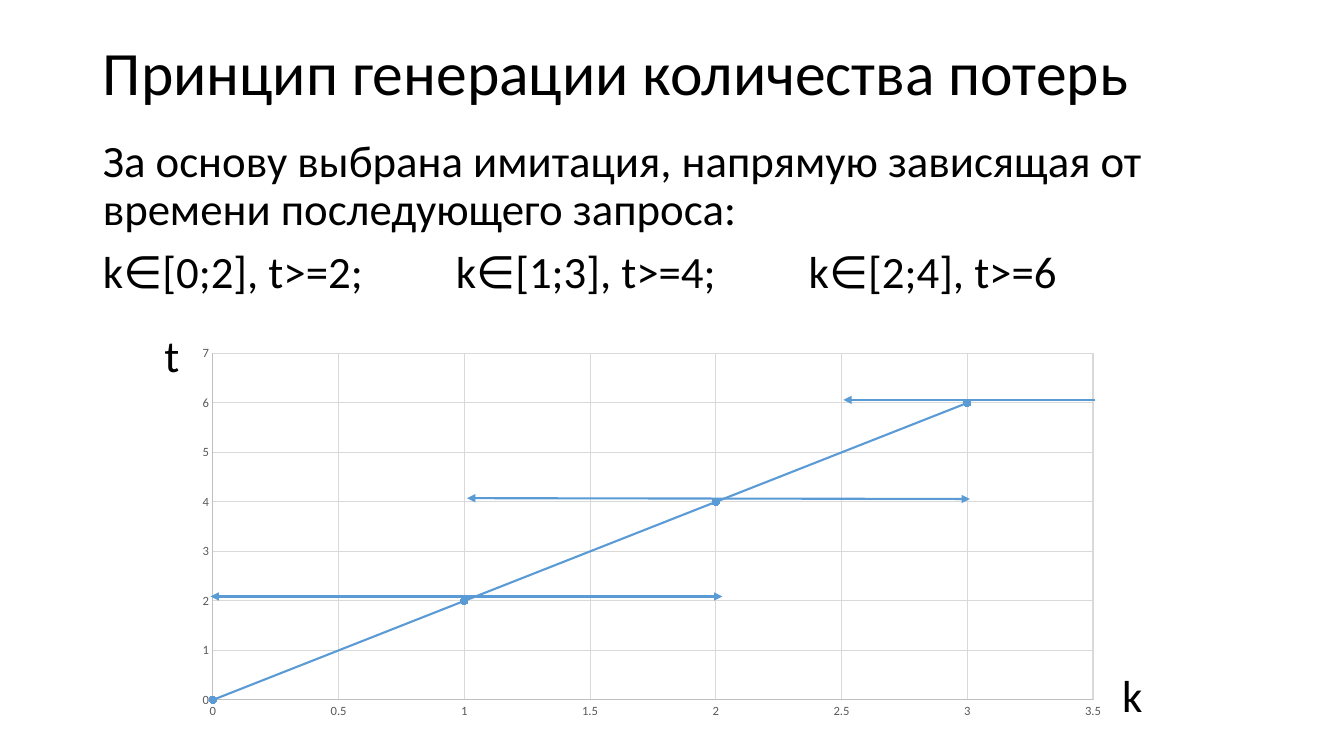
from dataclasses import dataclass

from lxml.etree import SubElement
from pptx import Presentation
from pptx.chart.data import XyChartData
from pptx.dml.color import RGBColor
from pptx.enum.chart import XL_CHART_TYPE as ChartType
from pptx.enum.chart import XL_MARKER_STYLE as MarkerStyle
from pptx.enum.chart import XL_TICK_MARK as TickMark
from pptx.enum.shapes import MSO_CONNECTOR as Connector
from pptx.enum.text import MSO_ANCHOR as Anchor
from pptx.enum.text import MSO_AUTO_SIZE as AutoSize
from pptx.oxml.ns import qn
from pptx.util import Inches, Pt


@dataclass(frozen=True)
class Theme:
    font: str = "Calibri"
    ink: RGBColor = RGBColor(0x00, 0x00, 0x00)
    label: RGBColor = RGBColor(0x59, 0x59, 0x59)
    axis: RGBColor = RGBColor(0xBF, 0xBF, 0xBF)
    grid: RGBColor = RGBColor(0xD9, 0xD9, 0xD9)
    accent: RGBColor = RGBColor(0x5B, 0x9B, 0xD5)
    title_size: int = 44
    body_size: int = 32
    chart_size: int = 10
    tick_size: int = 9
    marker_size: int = 5
    paragraph_gap: int = 10
    leading: float = 0.9
    thin: float = 0.75
    stroke: float = 1.5


class SlideBuilder:
    """Draws styled elements on a page divided into 12 columns and 10 rows."""

    columns, rows = 12, 10

    def __init__(self, deck, theme):
        self.theme = theme
        self.column = deck.slide_width / self.columns
        self.row = deck.slide_height / self.rows
        self.page = deck.slides.add_slide(deck.slide_layouts[6])

    def place(self, *lengths):
        units = (self.column, self.row) * 2
        return [round(length * unit) for length, unit in zip(lengths, units)]

    def style_font(self, font, size, color):
        font.name = self.theme.font
        font.size = Pt(size)
        font.color.rgb = color

    def style_line(self, line, color, width):
        line.color.rgb = color
        line.width = Pt(width)

    def text(self, area, lines, size, leading=None, gap=None,
             anchor=Anchor.TOP, wrap=True, fit=AutoSize.NONE):
        box = self.page.shapes.add_textbox(*self.place(*area))
        frame = box.text_frame
        frame.text = "\n".join(lines)
        frame.word_wrap = wrap
        frame.auto_size = fit
        frame.vertical_anchor = anchor
        for para in frame.paragraphs:
            para.line_spacing = leading
            para.space_before = gap and Pt(gap)
            for span in para.runs:
                self.style_font(span.font, size, self.theme.ink)

    def scatter(self, area, plot, name, points, x_scale, y_scale):
        theme = self.theme
        data = XyChartData()
        series_data = data.add_series(name)
        for x, y in points:
            series_data.add_data_point(x, y)
        chart = self.page.shapes.add_chart(
            ChartType.XY_SCATTER_LINES, *self.place(*area), data).chart
        chart.has_legend = chart.has_title = False
        self.style_font(chart.font, theme.chart_size, theme.ink)
        chart.plots[0].vary_by_categories = False

        for axis, (limit, step) in ((chart.category_axis, x_scale),
                                    (chart.value_axis, y_scale)):
            axis.minimum_scale, axis.maximum_scale = 0, limit
            axis.major_unit = step
            axis.major_tick_mark = axis.minor_tick_mark = TickMark.NONE
            axis.has_major_gridlines = True
            self.style_line(axis.major_gridlines.format.line, theme.grid, theme.thin)
            self.style_line(axis.format.line, theme.axis, theme.thin)
            self.style_font(axis.tick_labels.font, theme.tick_size, theme.label)

        series = chart.plots[0].series[0]
        series.smooth = False
        self.style_line(series.format.line, theme.accent, theme.stroke)
        marker = series.marker
        marker.style = MarkerStyle.CIRCLE
        marker.size = theme.marker_size
        marker.format.fill.solid()
        marker.format.fill.fore_color.rgb = theme.accent
        marker.format.line.color.rgb = theme.accent
        self.fix_plot(chart, plot)

    def fix_plot(self, chart, shares):
        plot_area = chart.element.find(".//" + qn("c:plotArea"))
        layout = plot_area.find(qn("c:layout"))
        if layout is None:
            layout = SubElement(plot_area, qn("c:layout"))
            plot_area.insert(0, layout)
        manual = SubElement(layout, qn("c:manualLayout"))
        settings = [("layoutTarget", "inner"), ("xMode", "edge"), ("yMode", "edge")]
        for tag, value in settings + list(zip("xywh", shares)):
            SubElement(manual, qn(f"c:{tag}")).set("val", str(value))

    def arrow(self, start, end, both_ends=True):
        line = self.page.shapes.add_connector(
            Connector.STRAIGHT, *self.place(*start, *end))
        self.style_line(line.line, self.theme.accent, self.theme.stroke)
        properties = line.element.spPr
        outline = properties.find(qn("a:ln"))
        for tag in ("headEnd", "tailEnd") if both_ends else ("tailEnd",):
            SubElement(outline, qn(f"a:{tag}")).set("type", "triangle")
        SubElement(properties, qn("a:effectLst"))


def main():
    deck = Presentation()
    deck.slide_width, deck.slide_height = Inches(13.33), Inches(7.5)
    theme = Theme()
    slide = SlideBuilder(deck, theme)

    slide.text((0.83, 0.23, 10.35, 1.53), ["Принцип генерации количества потерь"],
               theme.title_size, theme.leading, anchor=Anchor.MIDDLE)
    conditions = ["k∈[0;2], t>=2;", "k∈[1;3], t>=4;", "k∈[2;4], t>=6"]
    slide.text((0.83, 1.77, 10.35, 7.65), [
        "За основу выбрана имитация, напрямую зависящая от времени последующего запроса:",
        "\t\t".join(conditions),
    ], theme.body_size, theme.leading, theme.paragraph_gap)

    slide.scatter((1.65, 4.47, 8.36, 5.15), (0.03, 0.04, 0.94, 0.89), "Series 1",
                  [(k, 2 * k) for k in range(4)], (3.5, 0.5), (7, 1))
    slide.text((1.38, 4.27, 0.35, 0.85), ["t"], theme.body_size,
               fit=AutoSize.SHAPE_TO_FIT_TEXT)
    slide.text((9.93, 8.76, 0.37, 0.85), ["k"], theme.body_size,
               wrap=False, fit=AutoSize.SHAPE_TO_FIT_TEXT)

    slide.arrow((1.88, 7.89), (6.45, 7.89))
    slide.arrow((4.17, 6.59), (8.66, 6.6))
    slide.arrow((9.78, 5.29), (7.53, 5.29), both_ends=False)
    deck.save("out.pptx")


if __name__ == "__main__":
    main()
